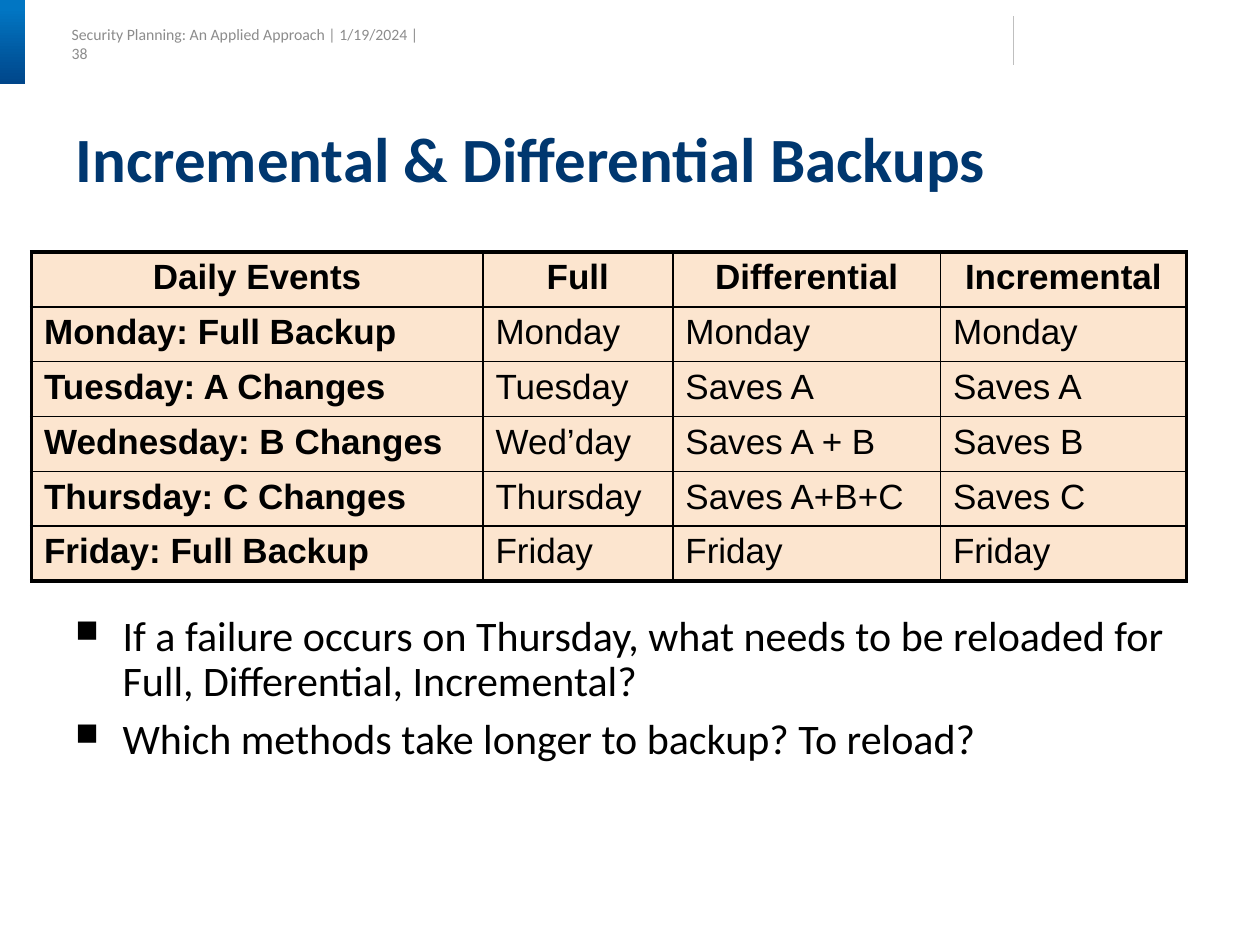
import pptx
import pptx.dml.color
import pptx.enum.shapes
import pptx.enum.text
import pptx.oxml
import pptx.oxml.ns
import pptx.util
from lxml import etree

Pt = pptx.util.Pt
ALIGN = pptx.enum.text.PP_ALIGN
ANCHOR = pptx.enum.text.MSO_ANCHOR
BLACK = "000000"

EVENTS = [
    ["Daily Events", "Full", "Differential", "Incremental"],
    ["Monday: Full Backup", "Monday", "Monday", "Monday"],
    ["Tuesday: A Changes", "Tuesday", "Saves A", "Saves A"],
    ["Wednesday: B Changes", "Wed’day", "Saves A + B", "Saves B"],
    ["Thursday: C Changes", "Thursday", "Saves A+B+C", "Saves C"],
    ["Friday: Full Backup", "Friday", "Friday", "Friday"],
]
COLUMN_WIDTHS = [258, 108.5, 153, 140.5]
QUESTIONS = [
    "If a failure occurs on Thursday, what needs to be reloaded for "
    "Full, Differential, Incremental?",
    "Which methods take longer to backup? To reload?",
]


def rgb(value):
    return pptx.dml.color.RGBColor.from_string(value)


def set_attributes(target, values):
    for name, value in values.items():
        setattr(target, name, value)


def write(paragraph, text, name, size, color, bold=False):
    paragraph.text = text
    font = paragraph.runs[0].font
    set_attributes(font, {"name": name, "size": Pt(size), "bold": bold})
    font.color.rgb = rgb(color)


def add_child(parent, tag, **attributes):
    child = etree.SubElement(parent, pptx.oxml.ns.qn(tag))
    for name, value in attributes.items():
        child.set(name, value)
    return child


def add_header(slide, left, top, width, height):
    """Place the corner bar, running header and divider in the top strip."""
    bar = slide.shapes.add_shape(
        pptx.enum.shapes.MSO_SHAPE.RECTANGLE,
        Pt(left), Pt(top), Pt(14.4), Pt(height))
    bar.shadow.inherit = False
    bar.line.fill.background()
    bar.fill.gradient()
    bar.fill.gradient_angle = 270
    stops = [("0176C3", 0.1), ("00468A", 1)]
    for stop, (color, position) in zip(bar.fill.gradient_stops, stops):
        stop.color.rgb = rgb(color)
        stop.position = position

    box = slide.shapes.add_textbox(
        Pt(left + 41), Pt(top + 16.6), Pt(204.5), Pt(16.6))
    set_attributes(box.text_frame, {
        "margin_left": 0, "margin_top": 0, "margin_right": 0,
        "margin_bottom": 0, "word_wrap": False,
        "vertical_anchor": ANCHOR.MIDDLE})
    write(box.text_frame.paragraphs[0],
          "Security Planning: An Applied Approach | 1/19/2024 | 38",
          "Calibri", 9, "8C8C8C")

    divider_x = Pt(left + width - 141)
    divider = slide.shapes.add_connector(
        pptx.enum.shapes.MSO_CONNECTOR.STRAIGHT,
        divider_x, Pt(top + 9.4), divider_x, Pt(top + 37.4))
    divider.line.color.rgb = rgb("BFBFBF")
    divider.line.width = Pt(0.75)
    add_child(divider._element.spPr, "a:effectLst")


def format_title(slide, left, top, width, height):
    title = slide.shapes.title
    set_attributes(title, {"left": Pt(left), "top": Pt(top),
                           "width": Pt(width), "height": Pt(height)})
    title.text_frame.vertical_anchor = ANCHOR.MIDDLE
    paragraph = title.text_frame.paragraphs[0]
    write(paragraph, "Incremental & Differential Backups",
          "Calibri", 36, "00376F", bold=True)
    paragraph.alignment = ALIGN.LEFT


def set_borders(cell, widths):
    """Draw black borders; widths maps a side (L, R, T, B) to points."""
    properties = cell._tc.get_or_add_tcPr()
    for index, (side, width) in enumerate(widths.items()):
        line = add_child(properties, f"a:ln{side}", w=str(Pt(width)))
        add_child(add_child(line, "a:solidFill"), "a:srgbClr", val=BLACK)
        properties.insert(index, line)


def add_backup_table(slide, left, top, width, height):
    last_row, last_column = len(EVENTS) - 1, len(COLUMN_WIDTHS) - 1
    table = slide.shapes.add_table(
        len(EVENTS), len(COLUMN_WIDTHS),
        Pt(left), Pt(top), Pt(width), Pt(height)).table
    set_attributes(table, {"first_row": False, "horz_banding": False})
    for column, share in zip(table.columns, COLUMN_WIDTHS):
        column.width = Pt(width * share / sum(COLUMN_WIDTHS))
    for row in table.rows:
        row.height = Pt(height / len(EVENTS))

    for r, texts in enumerate(EVENTS):
        for c, text in enumerate(texts):
            cell = table.cell(r, c)
            set_attributes(cell, {
                "margin_left": Pt(7.2), "margin_right": Pt(7.2),
                "margin_top": Pt(5), "margin_bottom": Pt(3.6)})
            cell.fill.solid()
            cell.fill.fore_color.rgb = rgb("FCE5CF")
            outer = {"L": c == 0, "R": c == last_column,
                     "T": r == 0, "B": r == last_row}
            set_borders(cell, {side: 2.25 if is_outer else 1
                               for side, is_outer in outer.items()})
            paragraph = cell.text_frame.paragraphs[0]
            write(paragraph, text, "Arial", 20, BLACK, bold=r == 0 or c == 0)
            set_attributes(paragraph, {
                "alignment": ALIGN.CENTER if r == 0 else ALIGN.LEFT,
                "line_spacing": 0.93})


def add_questions(slide, left, top, width, height):
    frame = slide.shapes.add_textbox(
        Pt(left), Pt(top), Pt(width), Pt(height)).text_frame
    frame.word_wrap = True
    for index, question in enumerate(QUESTIONS):
        paragraph = frame.add_paragraph() if index else frame.paragraphs[0]
        properties = paragraph._p.get_or_add_pPr()
        properties.set("marL", str(Pt(27)))
        properties.set("indent", str(Pt(-27)))
        add_child(properties, "a:buSzPct", val="75000")
        add_child(properties, "a:buChar", char="■")
        write(paragraph, question, "Calibri", 24, BLACK)
        set_attributes(paragraph, {"line_spacing": 0.9,
                                   "space_before": Pt(7 if index else 0)})


def main():
    presentation = pptx.Presentation()
    set_attributes(presentation, {"slide_width": Pt(720),
                                  "slide_height": Pt(540)})
    title_only = presentation.slide_layouts[5]
    slide = presentation.slides.add_slide(title_only)
    add_header(slide, 0, 0, 720, 48)
    format_title(slide, 36, 36, 648, 108)
    add_backup_table(slide, 18, 144, 660, 188)
    add_questions(slide, 36, 348, 648, 147)
    presentation.save("out.pptx")


if __name__ == "__main__":
    main()
